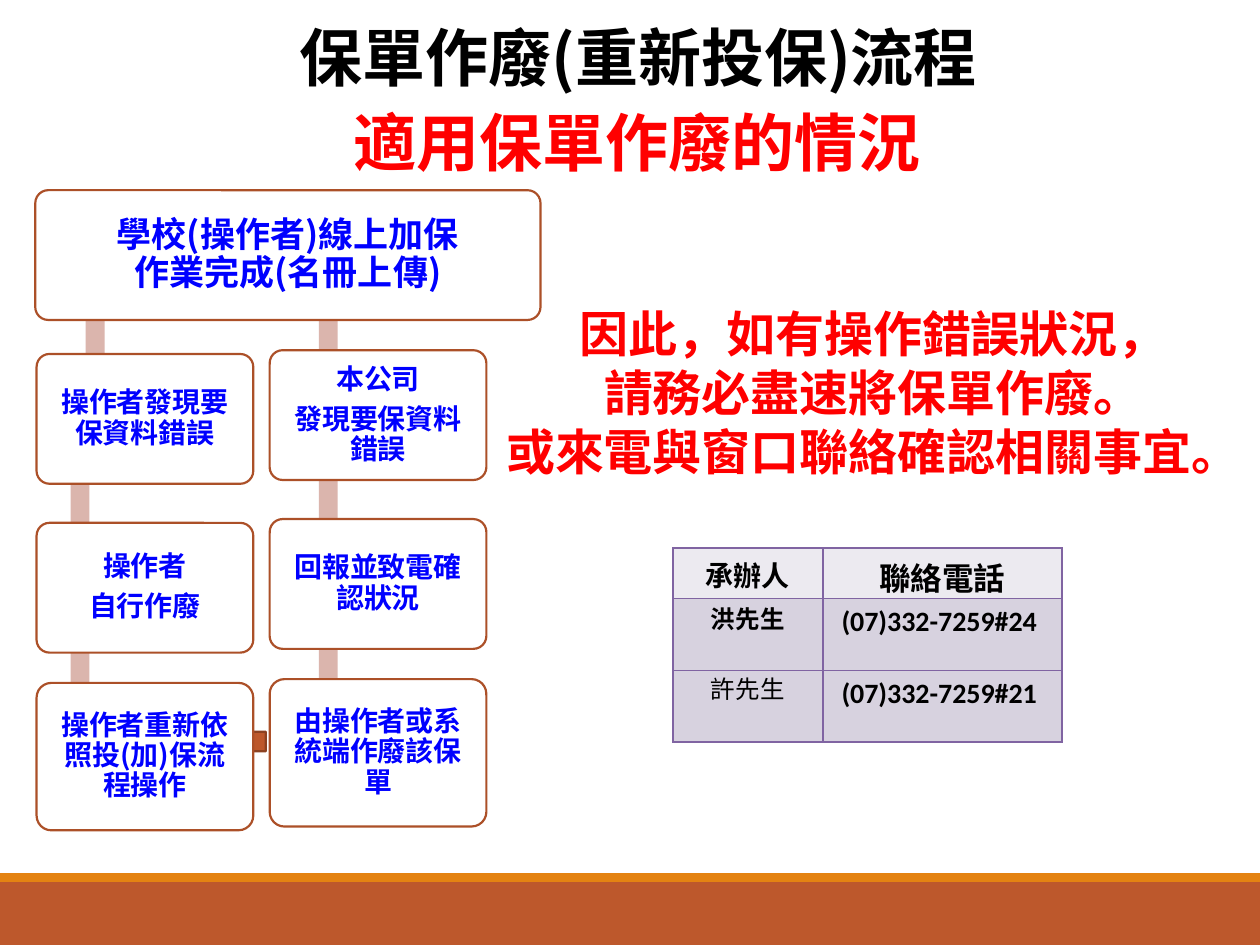
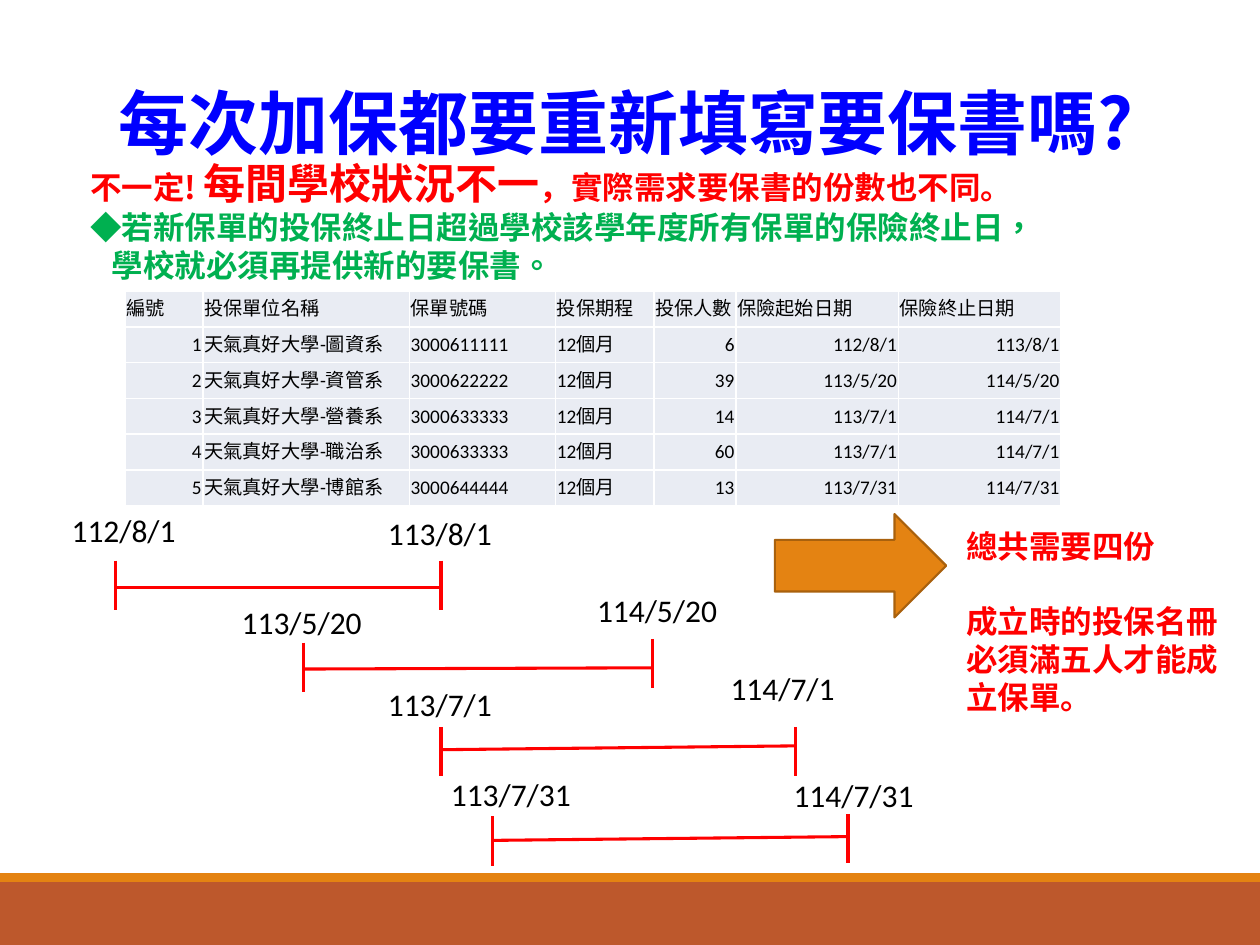
from lxml import etree
from pptx import Presentation
from pptx.dml.color import RGBColor
from pptx.enum.shapes import MSO_CONNECTOR, MSO_SHAPE
from pptx.enum.text import MSO_ANCHOR, PP_ALIGN
from pptx.oxml.ns import qn
from pptx.util import Inches, Pt

RECTANGLE = MSO_SHAPE.RECTANGLE
ROUNDED = MSO_SHAPE.ROUNDED_RECTANGLE
RIGHT_ARROW = MSO_SHAPE.RIGHT_ARROW
LEFT_ARROW = MSO_SHAPE.LEFT_ARROW
STRAIGHT = MSO_CONNECTOR.STRAIGHT
LEFT, CENTER, RIGHT = PP_ALIGN.LEFT, PP_ALIGN.CENTER, PP_ALIGN.RIGHT
TOP, MIDDLE = MSO_ANCHOR.TOP, MSO_ANCHOR.MIDDLE

CJK, LATIN, PLAIN = "Noto Sans CJK SC", "Calibri", "Arial"
COLORS = {
    "black": "000000", "white": "FFFFFF", "red": "FF0000", "blue": "0000FF", "green": "00B050",
    "rust": "BD582C", "rust_line": "8C4121", "orange": "E48312", "orange_line": "A9610D",
    "box_line": "AC5028", "link": "DBB5AD", "purple": "8064A2",
    "contact_head": "ECEAF0", "contact_body": "D7D2DF", "policy_cell": "E9ECF3",
}


def rgb(name):
    return RGBColor.from_string(COLORS[name])


def span(text, size=18, font=CJK, color="black", bold=False):
    return {"text": text, "size": size, "font": font, "color": color, "bold": bold}


def para(*spans, align=LEFT, spacing=None, before=0, after=0, indent=0):
    return {"spans": spans, "align": align, "spacing": spacing,
            "before": before, "after": after, "indent": indent}


def write_text(frame, paras):
    for index, item in enumerate(paras):
        target = frame.paragraphs[0] if index == 0 else frame.add_paragraph()
        target.alignment = item["align"]
        target.space_before, target.space_after = Pt(item["before"]), Pt(item["after"])
        if item["spacing"]:
            target.line_spacing = item["spacing"]
        if item["indent"]:
            target._p.get_or_add_pPr().set("marL", str(Inches(item["indent"])))
        for style in item["spans"]:
            run = target.add_run()
            run.text = style["text"]
            font = run.font
            font.size, font.bold, font.name = Pt(style["size"]), style["bold"], style["font"]
            font.color.rgb = rgb(style["color"])
            properties = run._r.get_or_add_rPr()
            if style["font"] != CJK:
                properties.set("lang", "zh-TW")
            latin = properties.find(qn("a:latin"))
            east_asian = etree.Element(qn("a:ea"), typeface=style["font"])
            latin.addnext(east_asian)


class SlideBuilder:
    def __init__(self):
        self.deck = Presentation()
        self.deck.slide_width, self.deck.slide_height = Inches(10), Inches(7.5)
        self.page = None

    def new_page(self):
        self.page = self.deck.slides.add_slide(self.deck.slide_layouts[6])
        self.shape(RECTANGLE, 0, 7, 10, 0.5, "rust")
        self.shape(RECTANGLE, 0, 6.93, 10, 0.07, "orange")

    def shape(self, kind, left, top, width, height, fill, line=None):
        shape = self.page.shapes.add_shape(
            kind, Inches(left), Inches(top), Inches(width), Inches(height))
        shape.shadow.inherit = False
        shape.fill.solid()
        shape.fill.fore_color.rgb = rgb(fill)
        if line:
            shape.line.color.rgb = rgb(line)
            shape.line.width = Pt(1.25)
        else:
            shape.line.fill.background()
        return shape

    def step(self, left, top, width, height, lines, size=16, after=5.6):
        box = self.shape(ROUNDED, left, top, width, height, "white", "box_line")
        box.adjustments[0] = 0.1
        frame = box.text_frame
        frame.word_wrap, frame.vertical_anchor = True, MIDDLE
        frame.margin_left = frame.margin_right = Inches(0.08)
        frame.margin_top = frame.margin_bottom = Inches(0.08)
        write_text(frame, [para(span(line, size, color="blue", bold=True),
                                align=CENTER, spacing=0.9, after=after) for line in lines])

    def text(self, left, top, width, height, *paras, wrap=True):
        box = self.page.shapes.add_textbox(
            Inches(left), Inches(top), Inches(width), Inches(height))
        box.text_frame.word_wrap = wrap
        box.text_frame.vertical_anchor = TOP
        write_text(box.text_frame, paras)

    def line(self, start, end):
        connector = self.page.shapes.add_connector(
            STRAIGHT, *(Inches(value) for value in (*start, *end)))
        connector.line.color.rgb = rgb("red")
        connector.line.width = Pt(1.75)
        etree.SubElement(connector._element.spPr, qn("a:effectLst"))

    def table(self, left, top, widths, heights, rows, border, fills, side_margin=0.1):
        table = self.page.shapes.add_table(
            len(heights), len(widths), Inches(left), Inches(top),
            Inches(sum(widths)), Inches(sum(heights))).table
        for column, width in zip(table.columns, widths):
            column.width = Inches(width)
        for row, height in zip(table.rows, heights):
            row.height = Inches(height)
        for row_index, row in enumerate(rows):
            for column_index, content in enumerate(row):
                cell = table.cell(row_index, column_index)
                cell.margin_left = cell.margin_right = Inches(side_margin)
                write_text(cell.text_frame, [content])
                self.borders(cell, border)
                cell.fill.solid()
                cell.fill.fore_color.rgb = rgb(fills[min(row_index, len(fills) - 1)])

    def borders(self, cell, color):
        properties = cell._tc.get_or_add_tcPr()
        for side in ("lnL", "lnR", "lnT", "lnB"):
            edge = etree.SubElement(properties, qn("a:" + side), w=str(Pt(0.96)))
            fill = etree.SubElement(edge, qn("a:solidFill"))
            etree.SubElement(fill, qn("a:srgbClr"), val=COLORS[color])


def build_void_process(builder):
    builder.new_page()
    builder.text(1.95, 0.1, 6.23, 0.7,
                 para(span("保單作廢(重新投保)流程", 36, bold=True), align=CENTER))
    builder.text(2.71, 0.77, 4.7, 0.7,
                 para(span("適用保單作廢的情況", 36, color="red", bold=True)), wrap=False)
    notice = ("因此，如有操作錯誤狀況，", "請務必盡速將保單作廢。", "或來電與窗口聯絡確認相關事宜。")
    builder.text(3.86, 2.36, 6.14, 2.76,
                 *(para(span(line, 28, color="red", bold=True), align=CENTER) for line in notice))

    contacts = [
        (span("承辦人", 16, bold=True), span("聯絡電話", 18, bold=True)),
        (span("洪先生", 14, LATIN, bold=True), span("(07)332-7259#24 ", 16, LATIN, bold=True)),
        (span("許先生", 14, PLAIN), span("(07)332-7259#21 ", 16, LATIN, bold=True)),
    ]
    builder.table(5.34, 4.35, (1.19, 1.9), (0.4, 0.57, 0.57),
                  [[para(content, align=CENTER) for content in row] for row in contacts],
                  "purple", ("contact_head", "contact_body"))

    row_tops, row_heights = (2.78, 4.12, 5.39), (1.03, 1.03, 1.17)
    branches = [
        (2.14, 0, (2.53, 2.53, 2.53),
         (("本公司", "發現要保資料錯誤"), ("回報並致電確認狀況",), ("由操作者或系統端作廢該保單",))),
        (0.29, 0.03, (0.68, 0.56, 0.56),
         (("操作者發現要保資料錯誤",), ("操作者", "自行作廢"), ("操作者重新依照投(加)保流程操作",))),
    ]
    for left, drop, link_lefts, steps in branches:
        for link_left, link_top, link_height in zip(link_lefts, (1.52, 3.07, 4.4), (1.72, 1.33, 1.34)):
            builder.shape(RECTANGLE, link_left, link_top + drop, 0.15, link_height, "link")
    builder.shape(LEFT_ARROW, 1.81, 5.73, 0.3, 0.31, "rust", "rust_line")
    for left, drop, link_lefts, steps in branches:
        for top, height, lines in zip(row_tops, row_heights, steps):
            builder.step(left, top + drop, 1.72, height, lines)
    builder.step(0.28, 1.51, 4.01, 1.03, ("學校(操作者)線上加保", "作業完成(名冊上傳)"), 20, 0)


def build_application_rules(builder):
    builder.new_page()
    builder.text(-0.09, 0.58, 10.12, 1.25,
                 para(span("每次加保都要重新填寫要保書嗎?", 40, color="blue", bold=True), align=CENTER))
    red = {"color": "red", "bold": True}
    green = {"font": PLAIN, "color": "green", "bold": True}
    builder.text(0.62, 1.2, 9.13, 1.11,
                 para(span("不一定! ", **red), span("每間學校狀況不一", 24, **red),
                      span("，實際需求要保書的份數也不同。", **red)),
                 para(span("◆若新保單的投保終止日超過學校該學年度所有保單的保險終止日，", **green)),
                 para(span("學校就必須再提供新的要保書。", **green), indent=0.17))

    headers = ("編號", "投保單位名稱", "保單號碼", "投保期程", "投保人數", "保險起始日期", "保險終止日期")
    policies = [
        ("圖資系", "3000611111", "6", "112/8/1", "113/8/1"),
        ("資管系", "3000622222", "39", "113/5/20", "114/5/20"),
        ("營養系", "3000633333", "14", "113/7/1", "114/7/1"),
        ("職治系", "3000633333", "60", "113/7/1", "114/7/1"),
        ("博館系", "3000644444", "13", "113/7/31", "114/7/31"),
    ]
    aligns = (RIGHT, LEFT, LEFT, LEFT, RIGHT, RIGHT, RIGHT)
    rows = [[para(span(header, 11, LATIN)) for header in headers]]
    for number, (department, policy, people, start, end) in enumerate(policies, 1):
        values = (str(number), "天氣真好大學-" + department, policy, "12個月", people, start, end)
        rows.append([para(span(value, 11, LATIN), align=align) for value, align in zip(values, aligns)])
    builder.table(0.99, 2.31, (0.62, 1.64, 1.16, 0.78, 0.65, 1.29, 1.29), [0.28] * len(rows),
                  rows, "white", ("policy_cell",), side_margin=0.01)

    periods = [
        (("112/8/1", 0.92, 4.45, 4.66, 0.47, 4.01), ("113/8/1", 3.5, 4.45, 4.66, 2.98, 4.03)),
        (("113/5/20", 2.41, 5.1, 5.31, 1.82, 4.74), ("114/5/20", 5.18, 5.07, 5.3, 4.64, 4.64)),
        (("113/7/1", 3.5, 5.77, 5.95, 2.98, 5.39), ("114/7/1", 6.31, 5.77, 5.92, 5.7, 5.26)),
        (("113/7/31", 3.91, 6.48, 6.67, 3.48, 6.1), ("114/7/31", 6.73, 6.46, 6.64, 6.2, 6.11)),
    ]
    for period in periods:
        for date, tick_left, tick_top, bar_top, label_left, label_top in period:
            builder.line((tick_left, tick_top), (tick_left, tick_top + 0.39))
            builder.text(label_left, label_top, 0.13 * (len(date) + 1), 0.4,
                         para(span(date, font=LATIN)), wrap=False)
        start, end = period
        builder.line((end[1], end[3]), (start[1], start[3]))

    builder.shape(RIGHT_ARROW, 6.15, 4.08, 1.36, 0.82, "orange", "orange_line")
    builder.text(7.57, 4.13, 2.29, 1.62, para(span("總共需要四份", **red)),
                 para(span("成立時的投保名冊必須滿五人才能成立保單。", **red), before=21.6))


def main():
    builder = SlideBuilder()
    build_void_process(builder)
    build_application_rules(builder)
    builder.deck.save("out.pptx")


if __name__ == "__main__":
    main()
